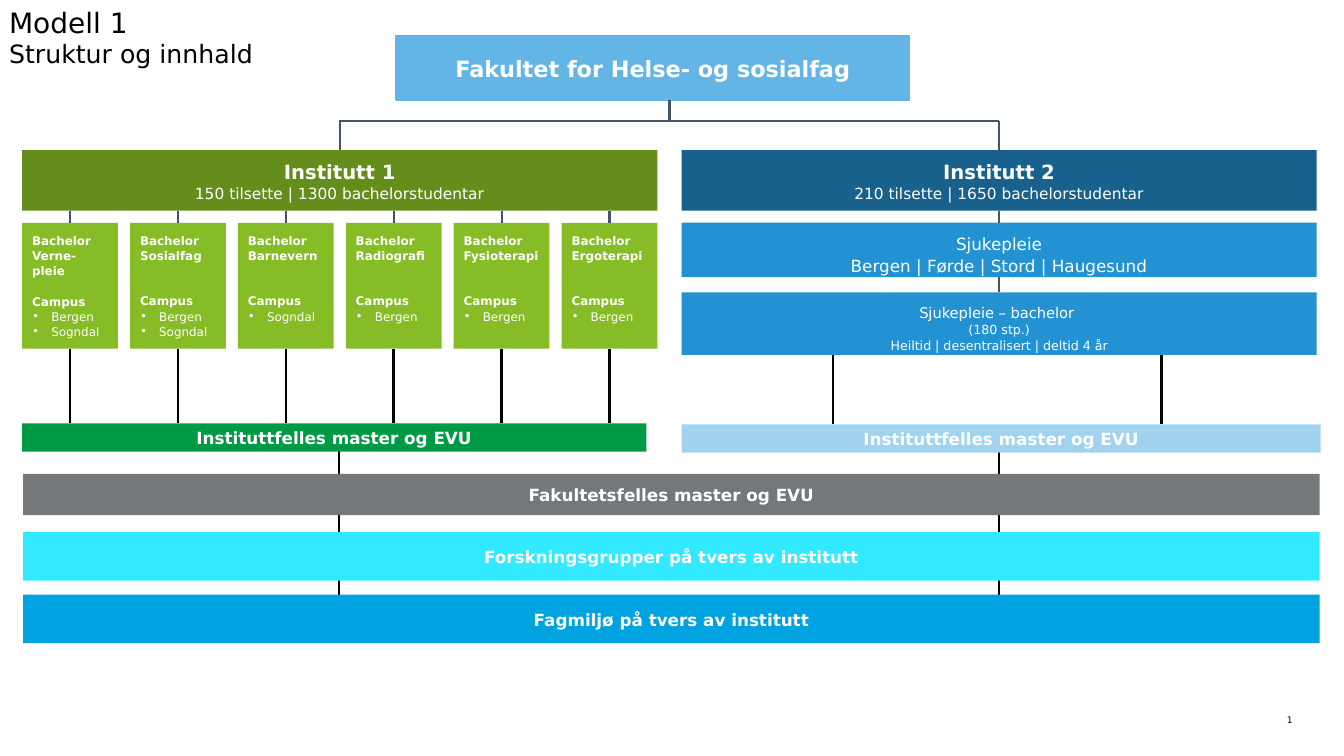
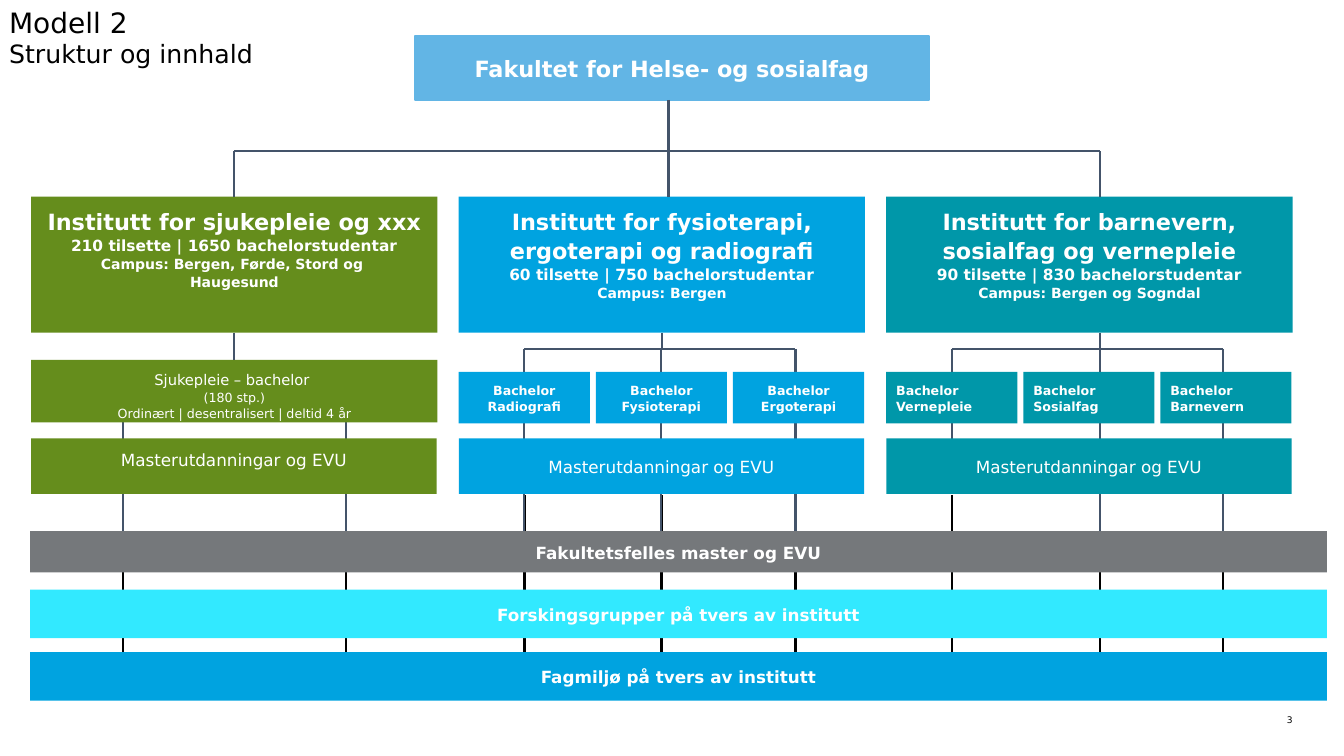
from lxml import etree
from pptx import Presentation
from pptx.dml.color import RGBColor
from pptx.enum.shapes import MSO_CONNECTOR, MSO_SHAPE
from pptx.enum.text import MSO_ANCHOR, MSO_AUTO_SIZE, PP_ALIGN
from pptx.oxml.ns import qn
from pptx.util import Inches, Pt

RECTANGLE = MSO_SHAPE.RECTANGLE
STRAIGHT = MSO_CONNECTOR.STRAIGHT
TOP, MIDDLE = MSO_ANCHOR.TOP, MSO_ANCHOR.MIDDLE
LEFT, CENTER, RIGHT = PP_ALIGN.LEFT, PP_ALIGN.CENTER, PP_ALIGN.RIGHT
NO_FIT = MSO_AUTO_SIZE.NONE

FONT = "DejaVu Sans"
COLORS = {
    "white": "FFFFFF", "black": "000000", "slate": "44546A",
    "sky": "62B5E5", "olive": "658D1C", "lime": "86BC25",
    "green": "009A44", "navy": "17618C", "blue": "2392D2",
    "pale": "A1D3EF", "gray": "75787B", "cyan": "32E9FF",
    "azure": "00A3E0", "teal": "0097A9",
}
LINE_WIDTHS = {"slate": 1.5, "black": 1.75}
BOTTOM_SITE, TOP_SITE = 2, 0

# Content: each text line is (text, size, bold)
SUBTITLE = "Struktur og innhald"
FACULTY = [("Fakultet for Helse- og sosialfag", 16, True)]
SHARED_MASTER = "Fakultetsfelles master og EVU"
SPECIALIST = "Fagmiljø på tvers av institutt"
INSTITUTE_MASTER = [("Instituttfelles master og EVU", 12, True)]
MASTER = [("Masterutdanningar og EVU", 12, False)]

INSTITUTE_1 = [("Institutt 1", 14, True),
               ("150 tilsette | 1300 bachelorstudentar", 11, False)]
INSTITUTE_2 = [("Institutt 2", 14, True),
               ("210 tilsette | 1650 bachelorstudentar", 11, False)]
# (programme, campuses, points above the campus heading)
PROGRAMMES = [
    ("Verne-pleie", ["Bergen", "Sogndal"], 11),
    ("Sosialfag", ["Bergen", "Sogndal"], 21.5),
    ("Barnevern", ["Sogndal"], 21.5),
    ("Radiografi", ["Bergen"], 21.5),
    ("Fysioterapi", ["Bergen"], 21.5),
    ("Ergoterapi", ["Bergen"], 21.5),
]
NURSING = [("Sjukepleie", 12, False),
           ("Bergen | Førde | Stord | Haugesund", 12, False)]


def nursing_bachelor(mode):
    return [("Sjukepleie – bachelor ", 10.5, False), ("(180 stp.)", 9, False),
            (f"{mode} | desentralisert | deltid 4 år", 9, False)]


DEPARTMENTS = [
    {"left": 0.31, "fill": "olive", "master_anchor": TOP, "stem": 2.32,
     "text": [("Institutt for sjukepleie og xxx", 16, True),
              ("210 tilsette | 1650 bachelorstudentar", 11, True),
              ("Campus: Bergen, Førde, Stord og ", 10, True),
              ("Haugesund", 10, True)],
     "programmes": [], "drops": [1.22, 3.43], "drop_top": 4.1},
    {"left": 4.55, "fill": "azure", "master_anchor": MIDDLE, "stem": 6.63,
     "text": [("Institutt for fysioterapi, ergoterapi og radiografi", 16, True),
              ("60 tilsette | 750 bachelorstudentar", 11, True),
              ("Campus: Bergen", 10, True)],
     "programmes": ["Radiografi", "Fysioterapi", "Ergoterapi"],
     "align": CENTER, "drops": [5.2, 6.56, 7.89], "drop_top": 3.46},
    {"left": 8.79, "fill": "teal", "master_anchor": MIDDLE, "stem": 10.91,
     "text": [("Institutt for barnevern, sosialfag og vernepleie", 16, True),
              ("90 tilsette | 830 bachelorstudentar", 11, True),
              ("Campus: Bergen og Sogndal", 10, True)],
     "programmes": ["Vernepleie", "Sosialfag", "Barnevern"],
     "align": LEFT, "drops": [9.44, 10.91, 12.13], "drop_top": 3.46,
     "dark_drop": 9.44},
]


# Shared building blocks
def rgb(name):
    return RGBColor.from_string(COLORS[name])


def add_span(para, text, size, bold=False, color="white"):
    span = para.add_run()
    span.text = text
    span.font.name = FONT
    span.font.size = Pt(size)
    span.font.bold = bold
    span.font.color.rgb = rgb(color)


def set_frame(frame, inset, anchor):
    frame.word_wrap = True
    frame.auto_size = NO_FIT
    frame.vertical_anchor = anchor
    frame.margin_left = frame.margin_right = Inches(inset)
    frame.margin_top = frame.margin_bottom = Inches(inset)


def add_para(frame, text, size, bold, align):
    first = frame.paragraphs[0]
    para = frame.add_paragraph() if first.runs else first
    para.alignment = align
    para.line_spacing = 1.06
    add_span(para, text, size, bold)
    return para


def add_bullet(para):
    properties = para._p.get_or_add_pPr()
    properties.set("marL", str(Inches(0.19)))
    properties.set("indent", str(-Inches(0.19)))
    etree.SubElement(properties, qn("a:buFont")).set("typeface", FONT)
    etree.SubElement(properties, qn("a:buChar")).set("char", "•")


def add_box(page, place, fill, lines, anchor=TOP, align=CENTER):
    box = page.shapes.add_shape(RECTANGLE, *[Inches(part) for part in place])
    box.shadow.inherit = False
    box.fill.solid()
    box.fill.fore_color.rgb = rgb(fill)
    box.line.fill.background()
    set_frame(box.text_frame, 0.1, anchor)
    for text, size, bold in lines:
        add_para(box.text_frame, text, size, bold, align)
    return box


def add_line(page, x1, y1, x2, y2, color):
    line = page.shapes.add_connector(STRAIGHT, x1, y1, x2, y2)
    line.line.color.rgb = rgb(color)
    line.line.width = Pt(LINE_WIDTHS[color])
    etree.SubElement(line._element.spPr, qn("a:effectLst"))
    return line


def middle(box):
    return box.left + box.width // 2


def add_drop(page, x, upper, lower, color="slate"):
    """Vertical line between two boxes or heights, joined at side middles."""
    x = Inches(x)
    joined = []
    for end in (upper, lower):
        near = hasattr(end, "left") and abs(middle(end) - x) <= Inches(0.01)
        joined.append(near)
        if near:
            x = middle(end)
    start = upper.top + upper.height if hasattr(upper, "top") else Inches(upper)
    stop = lower.top if hasattr(lower, "top") else Inches(lower)
    line = add_line(page, x, start, x, stop, color)
    if joined[0]:
        line.begin_connect(upper, BOTTOM_SITE)
    if joined[1]:
        line.end_connect(lower, TOP_SITE)


def add_rail(page, left, right, top):
    add_line(page, Inches(left), Inches(top), Inches(right), Inches(top), "slate")


def add_page(deck, title, number):
    page = deck.slides.add_slide(deck.slide_layouts[5])
    heading = page.shapes.title
    heading.left, heading.top = Inches(0.09), Inches(0.05)
    heading.width, heading.height = Inches(12.31), Inches(0.76)
    set_frame(heading.text_frame, 0, TOP)
    para = heading.text_frame.paragraphs[0]
    para.alignment = LEFT
    add_span(para, title, 20, color="black")
    para.add_line_break()
    add_span(para, SUBTITLE, 18, color="black")

    footer = page.shapes.add_textbox(
        Inches(12.48), Inches(7.09), Inches(0.34), Inches(0.11))
    set_frame(footer.text_frame, 0, TOP)
    para = footer.text_frame.paragraphs[0]
    para.alignment = RIGHT
    add_span(para, number, 6.5, color="black")
    return page


def add_faculty(page, left):
    box = add_box(page, (left, 0.36, 5.09, 0.63), "sky", FACULTY, MIDDLE)
    box.line.color.rgb = rgb("sky")
    box.line.width = Pt(1.5)
    return box


def add_bands(page, left, top, research):
    """Three bands across all institutes."""
    rows = [(0, 0.41, "gray", SHARED_MASTER), (0.58, 0.48, "cyan", research),
            (1.2, 0.48, "azure", SPECIALIST)]
    for offset, height, fill, text in rows:
        add_box(page, (left, top + offset, 12.86, height), fill,
                [(text, 12, True)], MIDDLE)


# Model 1: two institutes
def build_model_1(deck):
    page = add_page(deck, "Modell 1", "1")
    centers = (3.36, 9.91)
    for x in centers:
        add_drop(page, x, 4.4, 6.1, "black")
    faculty = add_faculty(page, 3.93)
    green = add_box(page, (0.22, 1.49, 6.3, 0.6), "olive", INSTITUTE_1, MIDDLE)
    navy = add_box(page, (6.76, 1.49, 6.3, 0.6), "navy", INSTITUTE_2, MIDDLE)
    add_drop(page, 6.64, faculty, 1.2)
    add_rail(page, *centers, 1.2)
    for x, institute in zip(centers, (green, navy)):
        add_drop(page, x, 1.2, institute)

    green_master = add_box(page, (0.22, 4.2, 6.19, 0.28), "green",
                           INSTITUTE_MASTER, MIDDLE)
    pale_master = add_box(page, (6.76, 4.21, 6.34, 0.28), "pale",
                          INSTITUTE_MASTER, MIDDLE)

    # Programme cards
    for index, (name, campuses, gap) in enumerate(PROGRAMMES):
        left = 0.22 + 1.07 * index
        card = add_box(page, (left, 2.21, 0.95, 1.25), "lime",
                       [("Bachelor", 8.5, True), (name, 8.5, True)], align=LEFT)
        add_para(card.text_frame, "Campus", 8.5, True, LEFT).space_before = Pt(gap)
        for campus in campuses:
            add_bullet(add_para(card.text_frame, campus, 8.5, False, LEFT))
        add_drop(page, left + 0.475, green, card)
        add_drop(page, left + 0.475, card, green_master, "black")

    # Nursing
    nursing = add_box(page, (6.76, 2.21, 6.3, 0.54), "blue", NURSING)
    bachelor = add_box(page, (6.76, 2.9, 6.3, 0.62), "blue",
                       nursing_bachelor("Heiltid"))
    add_drop(page, 9.91, navy, nursing)
    add_drop(page, 9.91, nursing, bachelor)
    for x in (8.26, 11.52):
        add_drop(page, x, bachelor, pale_master, "black")

    add_bands(page, 0.23, 4.7, "Forskningsgrupper på tvers av institutt")


# Model 2: three institutes
def build_model_2(deck):
    page = add_page(deck, "Modell 2", "3")
    # Long lines that pass behind the boxes
    for department in DEPARTMENTS:
        for x in department["drops"]:
            dark = x == department.get("dark_drop")
            add_drop(page, x, 4.91, 6.69, "black")
            add_drop(page, x, department["drop_top"], 4.9 if dark else 5.3)

    faculty = add_faculty(page, 4.12)
    add_rail(page, DEPARTMENTS[0]["stem"], DEPARTMENTS[-1]["stem"], 1.5)
    for department in DEPARTMENTS:
        left, fill = department["left"], department["fill"]
        stem, columns = department["stem"], department["drops"]
        institute = add_box(page, (left, 1.95, 4.03, 1.35), fill,
                            department["text"])
        add_drop(page, stem, faculty if stem == 6.63 else 1.5, institute)
        add_box(page, (left, 4.35, 4.02, 0.55), fill, MASTER,
                department["master_anchor"])
        if department["programmes"]:
            add_rail(page, columns[0], columns[-1], 3.46)
            add_drop(page, columns[1], institute, 3.46)
            for index, name in enumerate(department["programmes"]):
                add_box(page, (left + 1.36 * index, 3.69, 1.3, 0.51), fill,
                        [("Bachelor", 9, True), (name, 9, True)],
                        align=department["align"])
        else:
            bachelor = add_box(page, (left, 3.57, 4.03, 0.62), fill,
                               nursing_bachelor("Ordinært"))
            add_drop(page, stem, institute, bachelor)
    add_bands(page, 0.3, 5.27, "Forskingsgrupper på tvers av institutt")


def main():
    deck = Presentation()
    deck.slide_width, deck.slide_height = Inches(13.33), Inches(7.5)
    build_model_1(deck)
    build_model_2(deck)
    deck.save("out.pptx")


if __name__ == "__main__":
    main()
